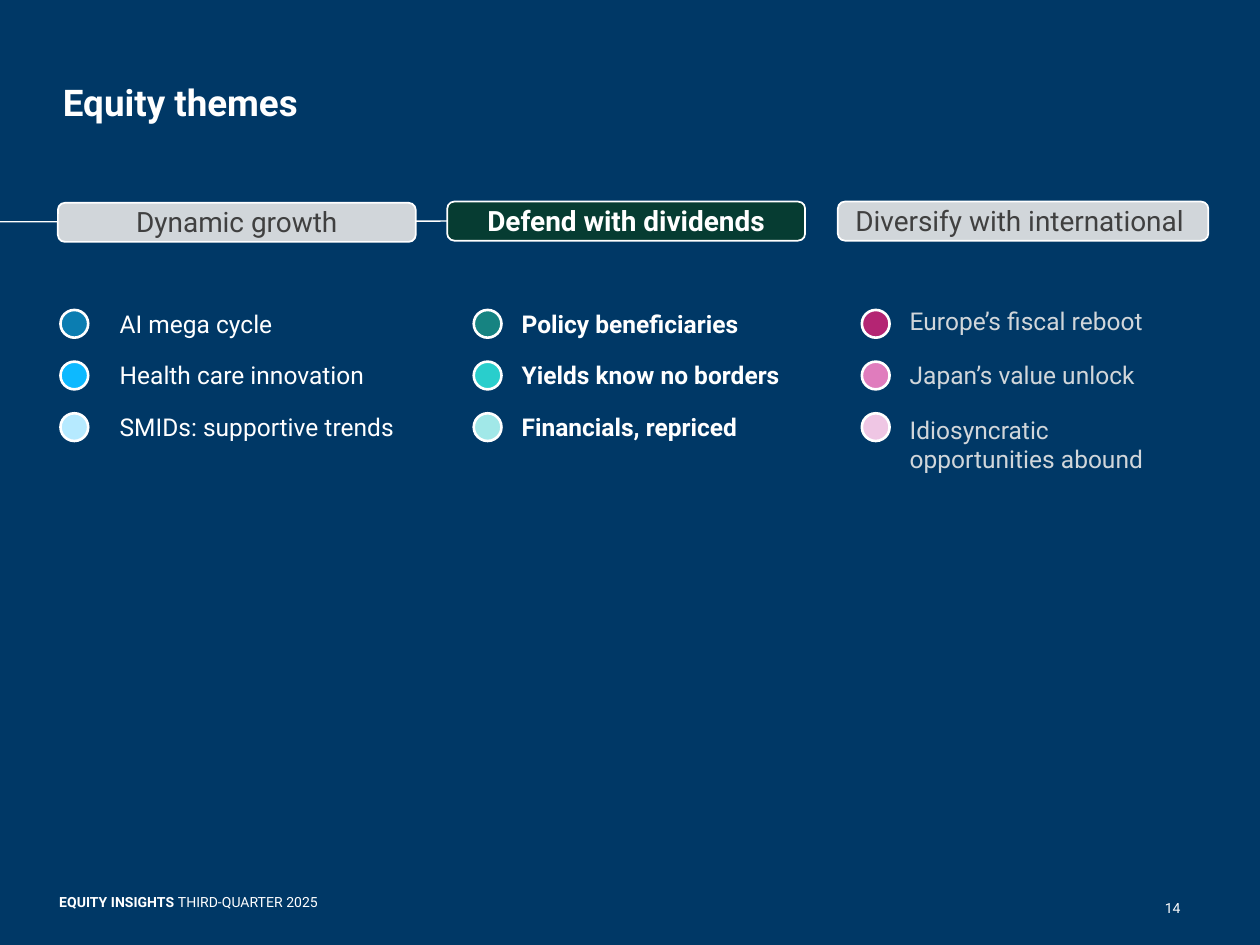
from dataclasses import dataclass

from lxml import etree
from pptx import Presentation
from pptx.dml.color import RGBColor
from pptx.enum import shapes, text
from pptx.oxml.ns import qn
from pptx.util import Inches, Pt

FONT = "Roboto"
NAVY, WHITE, GREY, CHARCOAL, GREEN = "003866", "FFFFFF", "D1D6DA", "404040", "063C32"
DOT_SIZE, DOT_TOP, DOT_STEP = 0.22, 2.46, 0.41


@dataclass
class Theme:
    heading: str
    header_box: tuple
    header_fill: str
    header_color: str
    dot_left: float
    dot_colors: tuple
    item_box: tuple  # left, top of the first item, width
    item_step: float
    item_color: str
    items: tuple
    bold: bool = False


THEMES = [
    Theme("Dynamic growth", (0.46, 1.61, 2.84, 0.31), GREY, CHARCOAL,
          0.48, ("0B7DB1", "0DB9FF", "B6EAFF"), (0.95, 2.45, 2.64), 0.41, WHITE,
          ("AI mega cycle", "Health care innovation", "SMIDs: supportive trends")),
    Theme("Defend with dividends", (3.55, 1.6, 2.84, 0.31), GREEN, WHITE,
          3.76, ("168381", "29CECC", "A1E8E8"), (4.14, 2.45, 2.5), 0.41, WHITE,
          ("Policy beneficiaries", "Yields know no borders", "Financials, repriced"),
          bold=True),
    Theme("Diversify with international ", (6.65, 1.6, 2.94, 0.31), GREY, CHARCOAL,
          6.84, ("B42573", "E07CBD", "EFC6E4"), (7.22, 2.43, 2.06), 0.43, GREY,
          ("Europe’s fiscal reboot", "Japan’s value unlock",
           "Idiosyncratic opportunities abound")),
]


def color(value):
    return RGBColor.from_string(value)


def set_insets(frame, left=0, top=0, right=0, bottom=0):
    frame.margin_left, frame.margin_top = Inches(left), Inches(top)
    frame.margin_right, frame.margin_bottom = Inches(right), Inches(bottom)


def add_span(para, words, size, fill, bold=False):
    span = para.add_run()
    span.text = words
    span.font.name, span.font.size, span.font.bold = FONT, Pt(size), bold
    span.font.color.rgb = color(fill)


def add_text(page, left, top, width, height, spans, size, fill=WHITE,
             anchor=text.MSO_ANCHOR.TOP):
    """Add a wrapped text box; spans are (words, bold) pairs. Return its frame."""
    box = page.shapes.add_textbox(*map(Inches, (left, top, width, height)))
    frame = box.text_frame
    frame.word_wrap = True
    frame.vertical_anchor = anchor
    set_insets(frame)
    for words, bold in spans:
        add_span(frame.paragraphs[0], words, size, fill, bold)
    return frame


def add_outlined(page, kind, place, fill, line_width):
    box = page.shapes.add_shape(kind, *map(Inches, place))
    box.shadow.inherit = False
    box.fill.solid()
    box.fill.fore_color.rgb = color(fill)
    box.line.color.rgb = color(WHITE)
    box.line.width = Pt(line_width)
    return box


def add_rule(page, left, right, y):
    rule = page.shapes.add_connector(shapes.MSO_CONNECTOR.STRAIGHT,
                                     *map(Inches, (left, y, right, y)))
    rule.line.color.rgb = color(WHITE)
    rule.line.width = Pt(0.75)
    etree.SubElement(rule._element.spPr, qn("a:effectLst"))
    return rule


def add_header(page, theme):
    box = add_outlined(page, shapes.MSO_SHAPE.ROUNDED_RECTANGLE,
                       theme.header_box, theme.header_fill, 1)
    box.adjustments[0] = 0.18
    frame = box.text_frame
    frame.word_wrap = True
    frame.vertical_anchor = text.MSO_ANCHOR.TOP
    set_insets(frame, bottom=0.15)
    para = frame.paragraphs[0]
    para.alignment = text.PP_ALIGN.CENTER
    add_span(para, theme.heading, 16, theme.header_color, theme.bold)
    return box


def add_items(page, theme):
    left, top, width = theme.item_box
    for row, (item, dot_color) in enumerate(zip(theme.items, theme.dot_colors)):
        add_text(page, left, top + row * theme.item_step, width, 0.24,
                 [(item, theme.bold)], 14, theme.item_color)
        dot_place = (theme.dot_left, DOT_TOP + row * DOT_STEP, DOT_SIZE, DOT_SIZE)
        add_outlined(page, shapes.MSO_SHAPE.OVAL, dot_place, dot_color, 1.5)


def add_title(page):
    frame = add_text(page, 0, 0.2, 9.96, 1.25, [("Equity themes", True)], 21,
                     anchor=text.MSO_ANCHOR.MIDDLE)
    set_insets(frame, left=0.5, right=0.2)
    frame.paragraphs[0].line_spacing = 0.95


def add_footer(page):
    add_text(page, 0.47, 7.09, 6.15, 0.13,
             [("EQUITY INSIGHTS ", True), ("THIRD-QUARTER 2025", False)], 8)
    number = add_text(page, 8.95, 7.13, 0.58, 0.14, [("14", False)], 8,
                      anchor=text.MSO_ANCHOR.BOTTOM)
    set_insets(number, right=0.16)
    para = number.paragraphs[0]
    para.alignment = text.PP_ALIGN.RIGHT
    para.line_spacing = 1.1


def main():
    deck = Presentation()
    deck.slide_width, deck.slide_height = Inches(10), Inches(7.5)
    page = deck.slides.add_slide(deck.slide_layouts[6])
    page.background.fill.solid()
    page.background.fill.fore_color.rgb = color(NAVY)

    add_title(page)
    rule = add_rule(page, 0, 3.55, 1.76)  # first, so that it runs behind the headers
    headers = [add_header(page, theme) for theme in THEMES]
    rule.end_connect(headers[1], 1)
    for theme in THEMES:
        add_items(page, theme)
    add_footer(page)
    deck.save("out.pptx")


if __name__ == "__main__":
    main()
